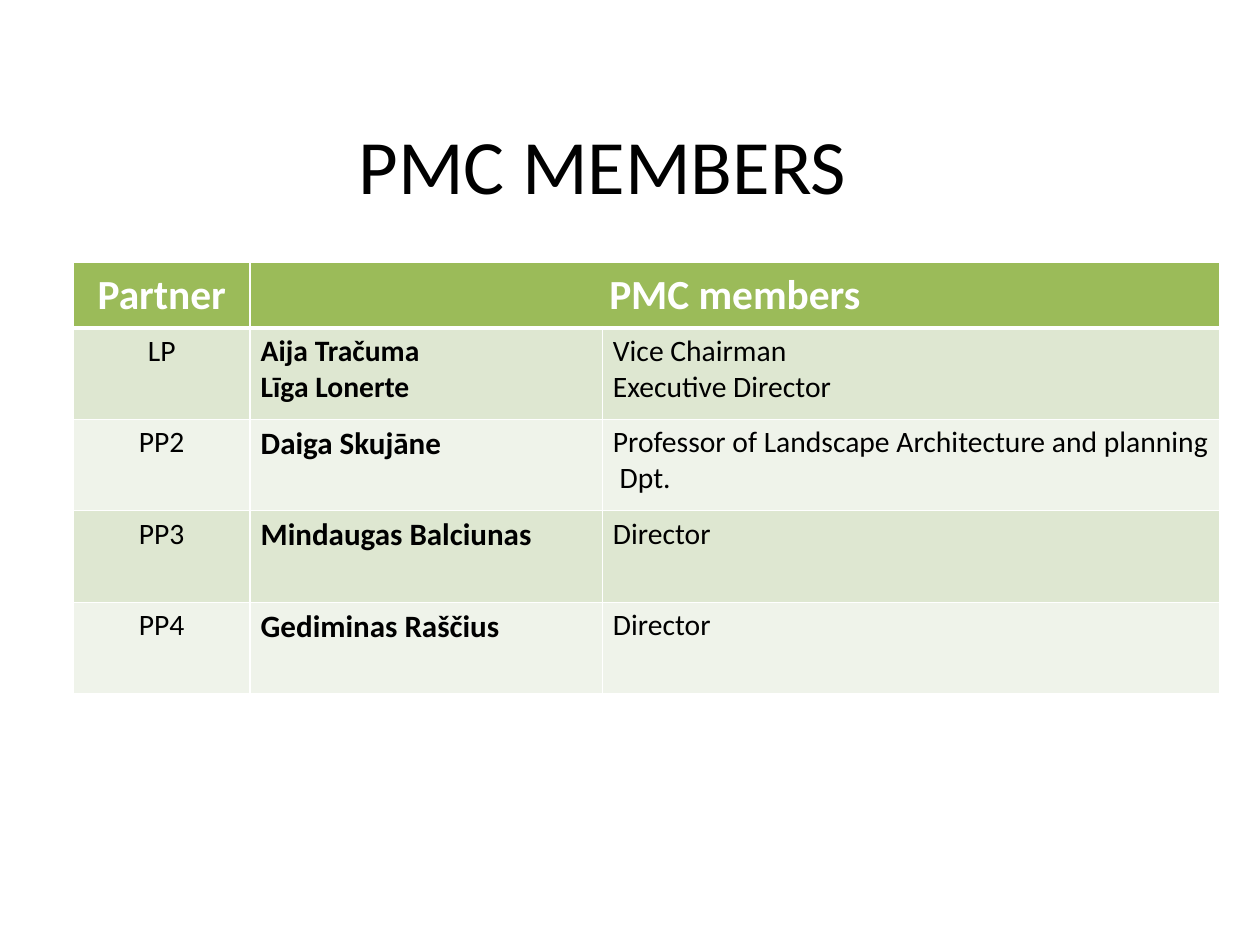
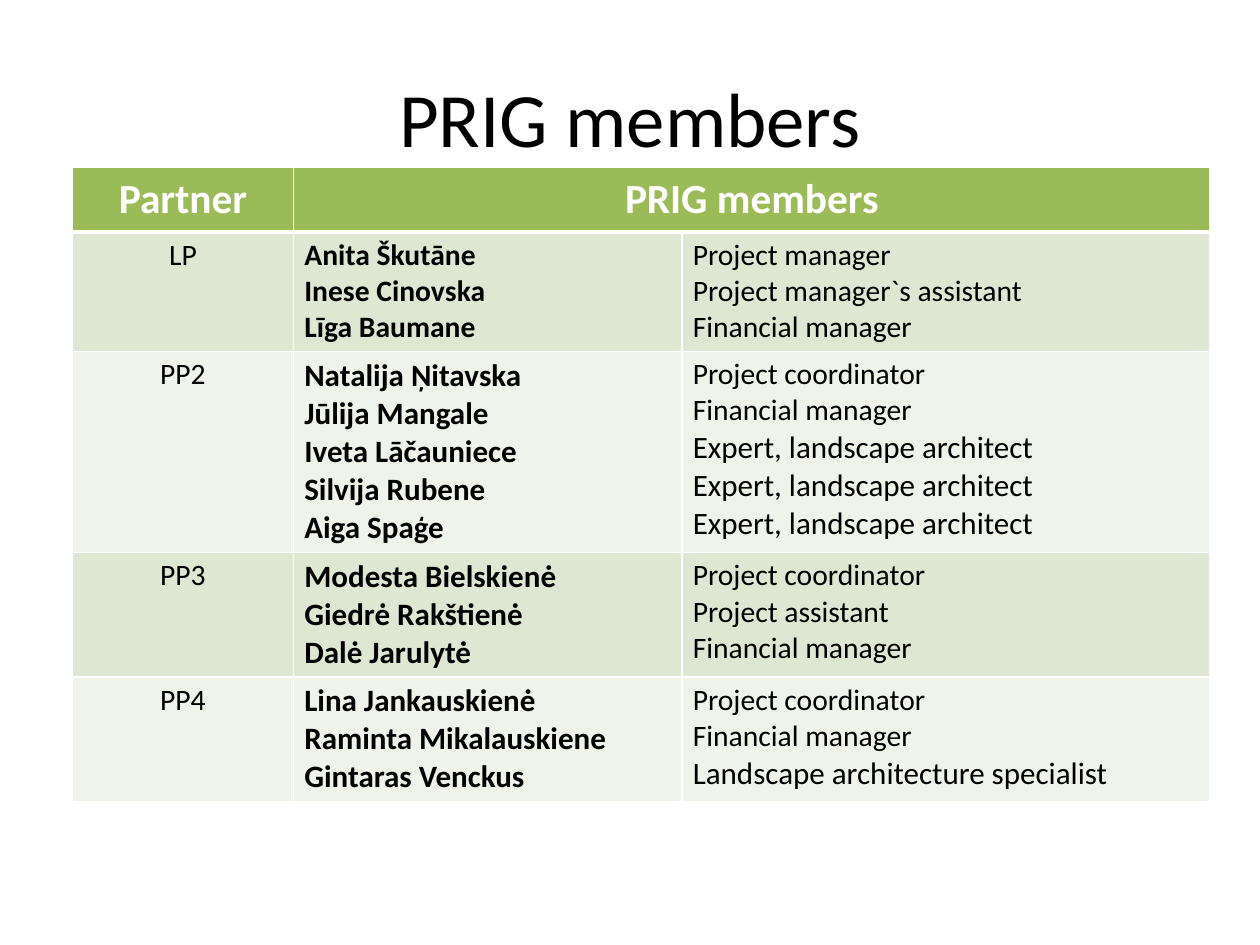
import pptx
import pptx.dml.color
import pptx.enum.text
import pptx.util
from lxml import etree
from pptx.oxml.ns import qn

Inches = pptx.util.Inches
Pt = pptx.util.Pt
RGBColor = pptx.dml.color.RGBColor
ALIGN = pptx.enum.text.PP_ALIGN
ANCHOR = pptx.enum.text.MSO_ANCHOR

BLACK = RGBColor(0x00, 0x00, 0x00)
WHITE = RGBColor(0xFF, 0xFF, 0xFF)
GREEN = RGBColor(0x9B, 0xBB, 0x59)
BANDS = (RGBColor(0xDE, 0xE7, 0xD1), RGBColor(0xEF, 0xF3, 0xEA))

FONT = "Calibri"
BODY, LARGE = 20, 21
TITLE_FONT = {"name": FONT, "size": Pt(52), "bold": False}
HEADER_FONT = {"name": FONT, "size": Pt(28), "bold": True}
TITLE_FRAME = {
    "margin_left": Inches(0.12),
    "margin_right": Inches(0.12),
    "margin_top": Inches(0.06),
    "margin_bottom": Inches(0.06),
    "vertical_anchor": ANCHOR.MIDDLE,
    "word_wrap": True,
    "auto_size": pptx.enum.text.MSO_AUTO_SIZE.NONE,
}
THIN, THICK = 1, 3


def lines(size, *texts):
    """Pair each line of text with a size in points."""
    return [(text, size) for text in texts]


PMC = {
    "title": "PMC MEMBERS",
    "title_box": (2.15, 0.8, 7.02, 1.47),
    "table_at": (0.69, 2.47),
    "columns": (1.66, 3.31, 5.8),
    "row_heights": (0.61, 0.86, 0.86, 0.86, 0.86),
    "heading": "PMC members",
    "partners": (
        ("LP", lines(BODY, "Aija Tračuma", "Līga Lonerte"),
         lines(BODY, "Vice Chairman", "Executive Director")),
        ("PP2", lines(LARGE, "Daiga Skujāne"),
         lines(BODY, "Professor of Landscape Architecture and planning  Dpt.")),
        ("PP3", lines(LARGE, "Mindaugas Balciunas"), lines(BODY, "Director")),
        ("PP4", lines(LARGE, "Gediminas Raščius"), lines(BODY, "Director")),
    ),
}

PRIG = {
    "title": "PRIG members",
    "title_box": (0.59, 0.36, 10.66, 1.48),
    "table_at": (0.68, 1.57),
    "columns": (2.08, 3.65, 4.96),
    "row_heights": (0.61, 1.11, 1.89, 1.17, 1.17),
    "heading": "PRIG members",
    "partners": (
        ("LP", lines(BODY, "Anita Škutāne", "Inese Cinovska", "Līga Baumane"),
         lines(BODY, "Project manager", "Project manager`s assistant", "Financial manager")),
        ("PP2", lines(LARGE, "Natalija Ņitavska", "Jūlija Mangale", "Iveta Lāčauniece",
                      "Silvija Rubene", "Aiga Spaģe"),
         lines(BODY, "Project coordinator", "Financial manager")
         + lines(LARGE, *["Expert, landscape architect"] * 3)),
        ("PP3", lines(LARGE, "Modesta Bielskienė", "Giedrė Rakštienė", "Dalė Jarulytė"),
         lines(BODY, "Project coordinator", "Project assistant", "Financial manager")),
        ("PP4", lines(LARGE, "Lina Jankauskienė", "Raminta Mikalauskiene", "Gintaras Venckus"),
         lines(BODY, "Project coordinator", "Financial manager")
         + lines(LARGE, "Landscape architecture specialist")),
    ),
}


def set_values(target, values):
    """Set attributes of an object from a dict."""
    for name, value in values.items():
        setattr(target, name, value)


def write_line(para, text, font, color, align):
    """Write one formatted line into a paragraph."""
    para.alignment = align
    span = para.add_run()
    span.text = text
    set_values(span.font, font)
    span.font.color.rgb = color


def style_cell(cell, fill, top=THIN, bottom=THIN):
    """Give a cell white borders and a solid fill."""
    properties = cell._tc.get_or_add_tcPr()
    for side, width in (("L", THIN), ("R", THIN), ("T", top), ("B", bottom)):
        border = etree.SubElement(properties, qn(f"a:ln{side}"), w=str(Pt(width)))
        solid = etree.SubElement(border, qn("a:solidFill"))
        etree.SubElement(solid, qn("a:srgbClr"), val=str(WHITE))
    cell.fill.solid()
    cell.fill.fore_color.rgb = fill


def fill_header(table, heading):
    """Fill the header row, whose second cell spans two columns."""
    for cell in table.rows[0].cells:
        style_cell(cell, GREEN, bottom=THICK)
        cell.vertical_anchor = ANCHOR.MIDDLE
    table.cell(0, 1).merge(table.cell(0, 2))
    for column, text in enumerate(("Partner", heading)):
        para = table.cell(0, column).text_frame.paragraphs[0]
        write_line(para, text, HEADER_FONT, WHITE, ALIGN.CENTER)


def fill_partner(table, row, partner, names, roles):
    """Fill one banded row with a partner, its people and their roles."""
    contents = (
        (lines(BODY, partner), False, ALIGN.CENTER),
        (names, True, ALIGN.LEFT),
        (roles, False, ALIGN.LEFT),
    )
    for column, (entries, bold, align) in enumerate(contents):
        cell = table.cell(row, column)
        style_cell(cell, BANDS[(row - 1) % 2], top=THICK if row == 1 else THIN)
        frame = cell.text_frame
        for index, (text, size) in enumerate(entries):
            para = frame.add_paragraph() if index else frame.paragraphs[0]
            font = {"name": FONT, "size": Pt(size), "bold": bold}
            write_line(para, text, font, BLACK, align)


def place_title(page, text, box):
    """Place and format the title placeholder."""
    title = page.shapes.title
    names = ("left", "top", "width", "height")
    set_values(title, dict(zip(names, map(Inches, box))))
    set_values(title.text_frame, TITLE_FRAME)
    write_line(title.text_frame.paragraphs[0], text, TITLE_FONT, BLACK, ALIGN.CENTER)


def place_table(page, members):
    """Place the table of partners and members."""
    widths, heights = members["columns"], members["row_heights"]
    box = (*members["table_at"], sum(widths), sum(heights))
    table = page.shapes.add_table(len(heights), len(widths), *map(Inches, box)).table
    for column, width in zip(table.columns, widths):
        column.width = Inches(width)
    for row, height in zip(table.rows, heights):
        row.height = Inches(height)
    fill_header(table, members["heading"])
    for row, partner in enumerate(members["partners"], start=1):
        fill_partner(table, row, *partner)


def add_members_page(deck, members):
    """Add a slide with a title and a table of members."""
    page = deck.slides.add_slide(deck.slide_layouts[5])
    place_title(page, members["title"], members["title_box"])
    place_table(page, members)


def main():
    """Build the deck and save it."""
    deck = pptx.Presentation()
    set_values(deck, {"slide_width": Inches(11.84), "slide_height": Inches(8.88)})
    for members in (PMC, PRIG):
        add_members_page(deck, members)
    deck.save("out.pptx")


if __name__ == "__main__":
    main()
